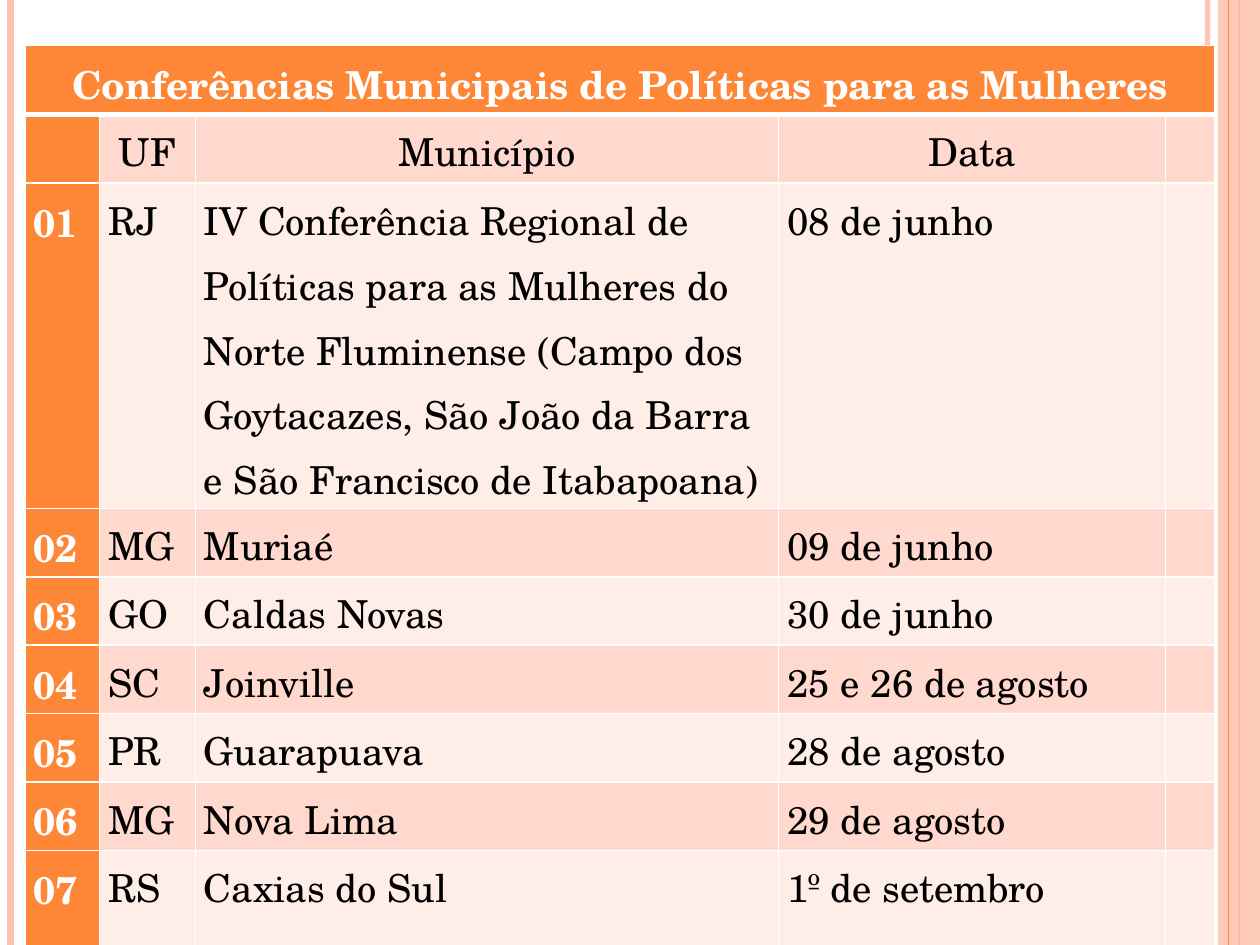
import pptx
import pptx.dml.color
import pptx.enum.shapes
import pptx.enum.text
import pptx.oxml
import pptx.oxml.ns
import pptx.util
from lxml import etree

Pt = pptx.util.Pt
CENTER = pptx.enum.text.PP_ALIGN.CENTER
ORANGE, PEACH, WHITE, BLACK = "FE8637", "FEC3AE", "FFFFFF", "000000"
BANDS = ("FFD9CE", "FFEDE8")
WIDTH, HEIGHT = 720, 540

TITLE = "Conferências Municipais de Políticas para as Mulheres"
HEADINGS = ("", "UF", "Município", "Data", "")
CONFERENCES = (
    ("RJ", "IV Conferência Regional de Políticas para as Mulheres do Norte Fluminense "
           "(Campo dos Goytacazes, São João da Barra e São Francisco de Itabapoana)", "08 de junho"),
    ("MG", "Muriaé", "09 de junho"),
    ("GO", "Caldas Novas", "30 de junho"),
    ("SC", "Joinville", "25 e 26 de agosto"),
    ("PR", "Guarapuava", "28 de agosto"),
    ("MG", "Nova Lima", "29 de agosto"),
    ("RS", "Caxias do Sul", "1º de setembro"),
)
COLUMN_WIDTHS = (42.5, 54.7, 333.4, 221, 28.1)
ROW_HEIGHTS = (39.6, 39, 186, *[39] * 5, 54.7)


def rgb(code):
    return pptx.dml.color.RGBColor.from_string(code)


def set_alpha(parent, percent):
    """Make every solid colour inside the element partly transparent."""
    for color in parent.iter(pptx.oxml.ns.qn("a:srgbClr")):
        etree.SubElement(color, pptx.oxml.ns.qn("a:alpha")).set("val", str(percent * 1000))


def write(frame, text, *, font="TeX Gyre Schola", size=22, color=BLACK, bold=False,
          align=None, spacing=1.15):
    paragraph = frame.paragraphs[0]
    paragraph.alignment = align
    paragraph.line_spacing = spacing
    run = paragraph.add_run()
    run.text = text
    run.font.name = font
    run.font.size = Pt(size)
    run.font.bold = bold
    run.font.color.rgb = rgb(color)


def set_borders(cell, **widths):
    """Draw white borders; keywords L, R, T and B override the 1 pt width."""
    properties = cell._tc.get_or_add_tcPr()
    for index, side in enumerate("LRTB"):
        width = Pt(widths.get(side, 1))
        properties.insert(index, pptx.oxml.parse_xml(
            f'<a:ln{side} {pptx.oxml.ns.nsdecls("a")} w="{width}"><a:solidFill>'
            f'<a:srgbClr val="{WHITE}"/></a:solidFill></a:ln{side}>'))


class SlideBuilder:
    def __init__(self, slide):
        self.slide = slide

    def vertical_line(self, x, width, color, alpha=None):
        line = self.slide.shapes.add_connector(
            pptx.enum.shapes.MSO_CONNECTOR.STRAIGHT, Pt(x), Pt(0), Pt(x), Pt(HEIGHT))
        line.line.width = Pt(width)
        line.line.color.rgb = rgb(color)
        properties = line._element.spPr
        if alpha:
            set_alpha(properties, alpha)
        etree.SubElement(properties, pptx.oxml.ns.qn("a:effectLst"))

    def band(self, left, width, color, alpha):
        band = self.slide.shapes.add_shape(
            pptx.enum.shapes.MSO_SHAPE.RECTANGLE, Pt(left), Pt(0), Pt(width), Pt(HEIGHT))
        band.shadow.inherit = False
        band.fill.solid()
        band.fill.fore_color.rgb = rgb(color)
        set_alpha(band._element.spPr, alpha)
        band.line.fill.background()

    def table(self, left, top, widths, heights):
        table = self.slide.shapes.add_table(
            len(heights), len(widths), Pt(left), Pt(top), Pt(sum(widths)), Pt(sum(heights))).table
        for column, width in zip(table.columns, widths):
            column.width = Pt(width)
        for row, height in zip(table.rows, heights):
            row.height = Pt(height)
        return table

    def cell(self, cell, text, fill, borders, **style):
        cell.fill.solid()
        cell.fill.fore_color.rgb = rgb(fill)
        cell.margin_left = cell.margin_right = Pt(5)
        cell.margin_top = cell.margin_bottom = Pt(0)
        set_borders(cell, **borders)
        if text:
            write(cell.text_frame, text, **style)


def main():
    presentation = pptx.Presentation()
    presentation.slide_width, presentation.slide_height = Pt(WIDTH), Pt(HEIGHT)
    builder = SlideBuilder(presentation.slides.add_slide(presentation.slide_layouts[6]))

    builder.vertical_line(690, 3, PEACH, alpha=93)
    builder.vertical_line(6, 4.5, PEACH)
    builder.vertical_line(708, 1.5, ORANGE)
    builder.band(696, 24, PEACH, alpha=87)
    builder.vertical_line(702, 0.75, ORANGE)

    schedule = builder.table(14.4, 26, COLUMN_WIDTHS, ROW_HEIGHTS)
    last_column = len(COLUMN_WIDTHS) - 1
    schedule.cell(0, 0).merge(schedule.cell(0, last_column))
    for column in range(last_column + 1):
        builder.cell(schedule.cell(0, column), "" if column else TITLE, ORANGE, {"B": 3},
                     color=WHITE, bold=True, align=CENTER)

    numbered = [(f"{number:02}", *conference, "")
                for number, conference in enumerate(CONFERENCES, 1)]
    for row, texts in enumerate([HEADINGS, *numbered], 1):
        is_heading = row == 1
        for column, text in enumerate(texts):
            is_number = column == 0
            builder.cell(schedule.cell(row, column), text,
                         ORANGE if is_number else BANDS[(row - 1) % 2],
                         {"T": 3} if is_heading else {},
                         color=WHITE if is_number else BLACK, bold=is_number,
                         align=CENTER if is_heading else None)

    presentation.save("out.pptx")


if __name__ == "__main__":
    main()
